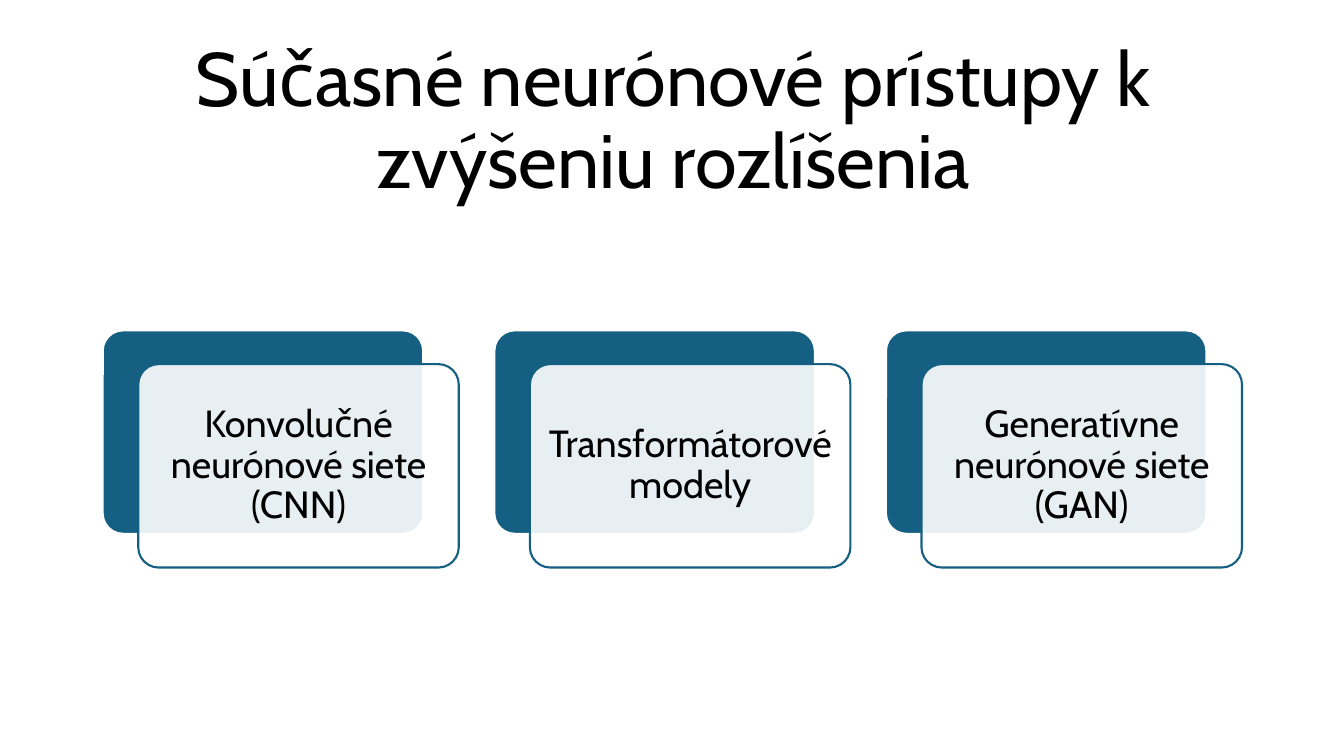
from pptx import Presentation
from pptx.dml.color import RGBColor
from pptx.enum.shapes import MSO_SHAPE
from pptx.enum.text import MSO_ANCHOR, MSO_AUTO_SIZE, PP_ALIGN
from pptx.oxml.ns import qn
from pptx.util import Pt
from lxml.etree import SubElement

FONT = "Cabin"
BLUE = "156082"
WHITE = "FFFFFF"
BLACK = "000000"
MODELS = [
    "Konvolučné neurónové siete (CNN)",
    "Transformátorové modely",
    "Generatívne neurónové siete (GAN)",
]


def color(code):
    return RGBColor.from_string(code)


def write(shape, text, size, inset):
    frame = shape.text_frame
    frame.text = text
    frame.word_wrap = True
    frame.auto_size = MSO_AUTO_SIZE.NONE
    frame.vertical_anchor = MSO_ANCHOR.MIDDLE
    frame.margin_left = frame.margin_right = Pt(inset)
    frame.margin_top = frame.margin_bottom = Pt(8)
    para = frame.paragraphs[0]
    para.alignment = PP_ALIGN.CENTER
    para.line_spacing = 0.9
    para.font.name = FONT
    para.font.size = Pt(size)
    para.font.color.rgb = color(BLACK)


def add_title(slide, text, left, top, width, height):
    title = slide.shapes.title
    title.left, title.top = Pt(left), Pt(top)
    title.width, title.height = Pt(width), Pt(height)
    write(title, text, 54, 7.2)


def add_panel(slide, left, top, width, height, fill, line):
    panel = slide.shapes.add_shape(
        MSO_SHAPE.ROUNDED_RECTANGLE, Pt(left), Pt(top), Pt(width), Pt(height)
    )
    panel.adjustments[0] = 0.1
    panel.shadow.inherit = False
    panel.fill.solid()
    panel.fill.fore_color.rgb = color(fill)
    panel.line.color.rgb = color(line)
    panel.line.width = Pt(1.5)
    return panel


def add_card(slide, text, left, top, width, height):
    wide, high = width - 25.4, height - 24.1
    add_panel(slide, left, top, wide, high, BLUE, WHITE)
    front = add_panel(slide, left + 25.4, top + 24.1, wide, high, WHITE, BLUE)
    tint = front.fill._xPr.find(qn("a:solidFill"))[0]
    SubElement(tint, qn("a:alpha")).set("val", "90000")
    write(front, text, 27, 8)


def add_cards(slide, left, top, width, height):
    gap = 25.4
    wide = (width - gap * (len(MODELS) - 1)) / len(MODELS)
    for i, text in enumerate(MODELS):
        add_card(slide, text, left + i * (wide + gap), top, wide, height)


def main():
    deck = Presentation()
    deck.slide_width, deck.slide_height = Pt(960), Pt(540)
    slide = deck.slides.add_slide(deck.slide_layouts[5])
    add_title(
        slide,
        "Súčasné neurónové prístupy k zvýšeniu rozlíšenia",
        120.2, 43.2, 721.4, 89.3,
    )
    add_cards(slide, 73.4, 236, 813.8, 169.4)
    deck.save("out.pptx")


if __name__ == "__main__":
    main()
